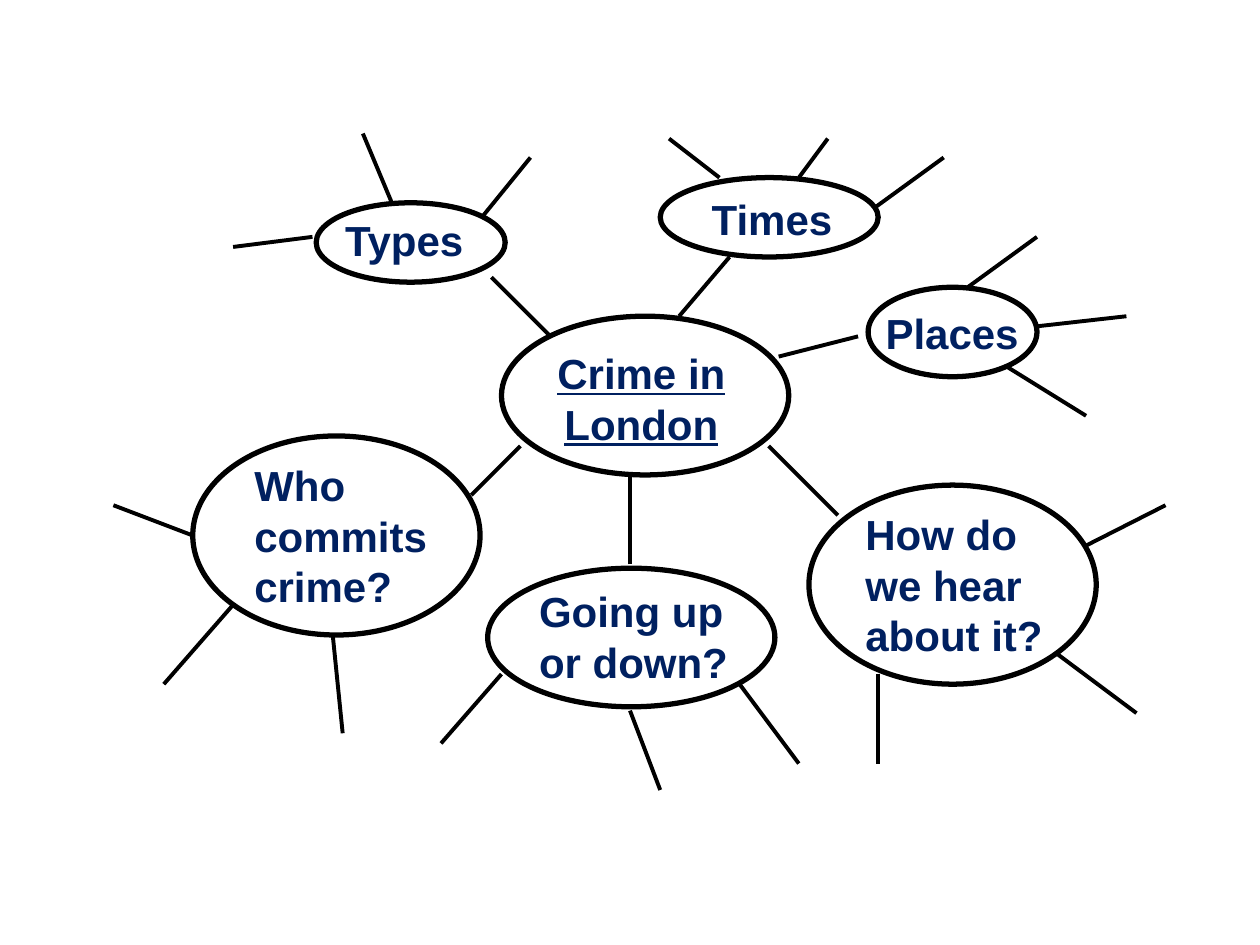
"""Build a mind map slide about crime in London on a grid of 100 columns by 75 rows."""
from pptx import Presentation, util as u
from pptx.dml.color import RGBColor
from pptx.enum import shapes, text
from pptx.oxml.ns import qn
from lxml import etree

prs = Presentation()
prs.slide_width, prs.slide_height = u.Inches(10), u.Inches(7.5)
s = prs.slides.add_slide(prs.slide_layouts[6])
CELL = prs.slide_width / 100


def grid(*cells):
    return [u.Emu(round(c * CELL)) for c in cells]


def color(value):
    return RGBColor.from_string(value)


# topic, oval box, text box, lines as (from column, from row, to column, to row)
topics = [
    ("Crime in London", (39.8, 25.1, 22.8, 12.6), (39.5, 27.1, 22.8, 9.1), []),
    ("Types", (25.1, 16.1, 15, 6.3), (26.4, 16.5, 11.8, 5),
     [(39, 22, 43.7, 26.7), (18.5, 19.6, 24.8, 18.8),
      (28.8, 10.6, 31.1, 16.1), (42.1, 12.5, 38.2, 17.3)]),
    ("Times", (52.4, 14.1, 17.3, 6.3), (55.5, 14.9, 13.4, 5),
     [(57.9, 20.4, 53.9, 25.1), (53.1, 11, 57.1, 14.1),
      (65.7, 11, 63.4, 14.1), (74.9, 12.5, 69.4, 16.5)]),
    ("Places", (68.9, 22.8, 13.4, 7.1), (69.3, 23.9, 17.7, 5),
     [(68.1, 26.7, 61.8, 28.3), (82.3, 18.8, 76.8, 22.8),
      (89.4, 25.1, 82.3, 25.9), (86.2, 33, 79.9, 29.1)]),
    ("Who commits crime?", (15.3, 34.6, 22.8, 15.8), (19.2, 36, 18.1, 13),
     [(37.4, 39.3, 41.3, 35.4), (9, 40.1, 15.3, 42.5),
      (13, 54.3, 18.5, 48), (27.2, 58.2, 26.4, 50.3)]),
    ("Going up or down?", (38.7, 45.1, 22.8, 11), (41.8, 46, 17.7, 9),
     [(50, 44.8, 50, 37.7), (35, 59, 39.8, 53.5),
      (52.4, 62.7, 50, 56.4), (63.4, 60.6, 58.7, 54.3)]),
    ("How do we hear about it?", (64.2, 38.5, 22.8, 15.8), (67.7, 39.9, 17.7, 13),
     [(66.5, 40.9, 61, 35.4), (69.7, 60.6, 69.7, 53.5),
      (90.2, 56.6, 83.9, 51.9), (92.5, 40.1, 86.2, 43.3)]),
]

for topic, oval, box, lines in topics:
    sp = s.shapes.add_shape(shapes.MSO_SHAPE.OVAL, *grid(*oval))
    sp.shadow.inherit = False
    sp.fill.background()
    sp.line.color.rgb = color("000000")
    sp.line.width = u.Pt(3)

    tf = s.shapes.add_textbox(*grid(*box)).text_frame
    tf.word_wrap = True
    tf.auto_size = text.MSO_AUTO_SIZE.SHAPE_TO_FIT_TEXT
    tf.text = topic
    p = tf.paragraphs[0]
    r = p.runs[0]
    r.font.name, r.font.size, r.font.bold = "Arial", u.Pt(24), True
    r.font.color.rgb = color("002060")
    if not lines:
        p.alignment = text.PP_ALIGN.CENTER
        r.font.underline = True

    for ends in lines:
        ln = s.shapes.add_connector(shapes.MSO_CONNECTOR.STRAIGHT, *grid(*ends))
        ln.line.color.rgb = color("000000")
        ln.line.width = u.Pt(2.25)
        etree.SubElement(ln._element.spPr, qn("a:effectLst"))

prs.save("out.pptx")
